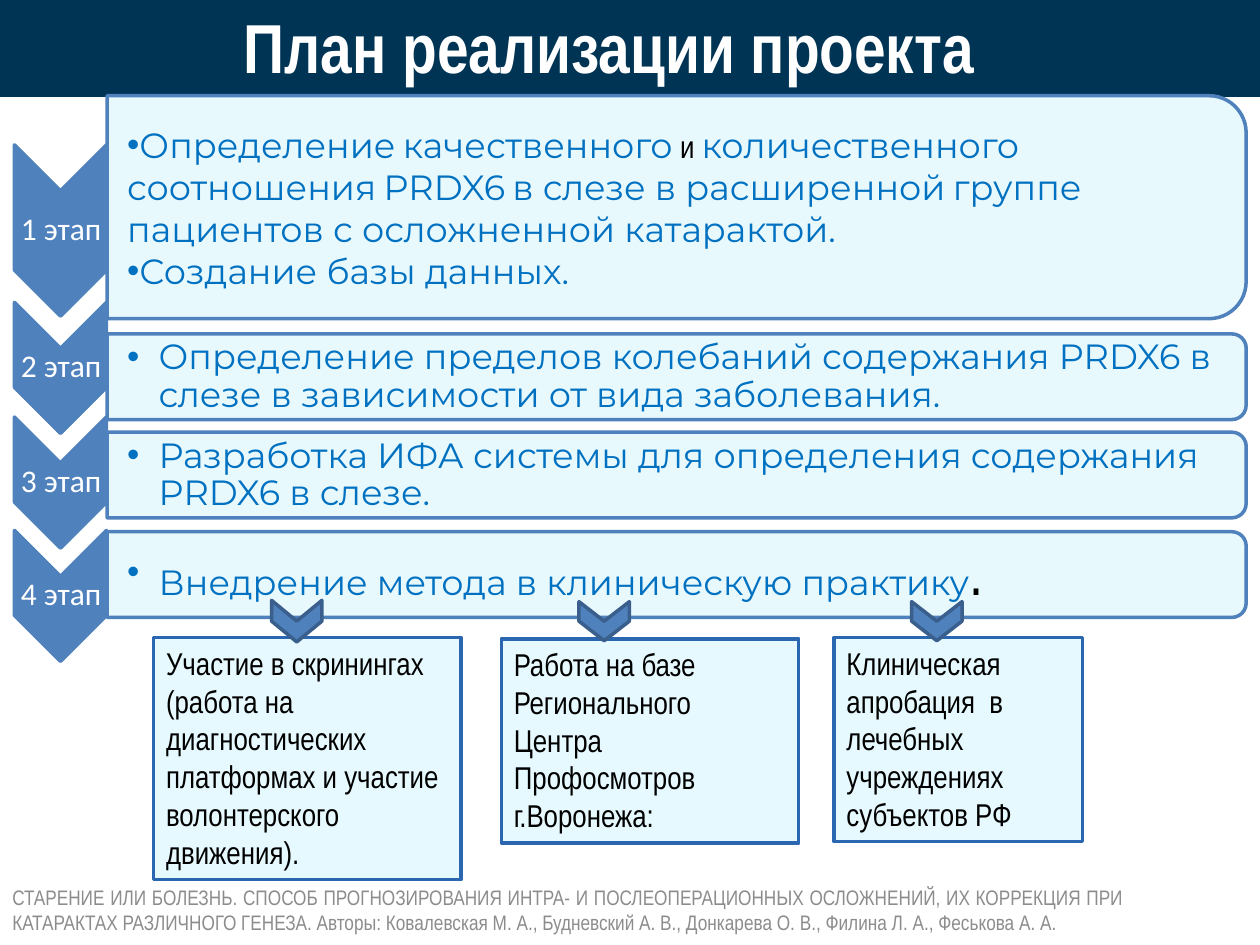
import pptx
import pptx.util
import pptx.dml.color
import pptx.enum.shapes
import pptx.enum.text
import lxml.etree

Inches, Pt = pptx.util.Inches, pptx.util.Pt
RGB = pptx.dml.color.RGBColor.from_string
SHAPE = pptx.enum.shapes.MSO_SHAPE
ALIGN = pptx.enum.text.PP_ALIGN
ANCHOR = pptx.enum.text.MSO_ANCHOR
C = {"navy": "003455", "blue": "4F81BD", "edge": "3A5F8C", "frame": "2A67B0",
     "pale": "E6F9FE", "text": "0070C0", "black": "000000", "white": "FFFFFF",
     "grey": "8C8C8C"}
NS = "{http://schemas.openxmlformats.org/drawingml/2006/main}"

prs = pptx.Presentation()
prs.slide_width, prs.slide_height = Inches(10), Inches(7.5)
s = prs.slides.add_slide(prs.slide_layouts[6])


def add_shape(kind, x, y, w, h, fill, line, rotation=0):
    sp = s.shapes.add_shape(kind, Inches(x), Inches(y), Inches(w), Inches(h))
    sp.rotation = rotation
    sp.shadow.inherit = False
    sp.fill.solid()
    sp.fill.fore_color.rgb = RGB(C[fill])
    sp.line.color.rgb = RGB(C[line])
    sp.line.width = Pt(2)
    return sp


def add_text(x, y, w, h, text, size, font, color, align=ALIGN.LEFT, anchor=ANCHOR.MIDDLE):
    tf = s.shapes.add_textbox(Inches(x), Inches(y), Inches(w), Inches(h)).text_frame
    tf.word_wrap = True
    tf.vertical_anchor = anchor
    tf.text = text
    for p in tf.paragraphs:
        p.alignment = align
        for r in p.runs:
            r.font.size, r.font.name = Pt(size), font
            r.font.color.rgb = RGB(C[color])
    return tf


add_shape(SHAPE.RECTANGLE, 0, 0, 10, 0.76, "navy", "navy")
tf = add_text(0.2, 0.05, 9.27, 0.63, "План реализации проекта", 39.6, "Arial Narrow",
              "white", ALIGN.CENTER)
tf.paragraphs[0].runs[0].font.bold = True

stages = [
    (1.15, 1.36, 0.76, 1.77, 0,
     [["Определение", " ", "качественного", " и ", "количественного", " ", "соотношения",
       " ", "PRDX6", " ", "в слезе в расширенной", " ",
       "группе пациентов с осложненной катарактой."], ["Создание базы данных."]]),
    (2.4, 1.04, 2.65, 0.68, 0.25,
     [["Определение пределов колебаний содержания PRDX6 в слезе "
       "в зависимости от вида заболевания."]]),
    (3.31, 1.04, 3.43, 0.68, 0.25,
     [["Разработка ИФА системы для определения содержания PRDX6 в слезе."]]),
    (4.21, 1.04, 4.22, 0.68, 0.25,
     [["Внедрение метода в клиническую практику", "."]]),
]
for i, (top, length, panel_top, panel_h, indent, paragraphs) in enumerate(stages, 1):
    add_shape(SHAPE.CHEVRON, 0.48 - length / 2, top + length / 2 - 0.365, length, 0.73,
              "blue", "blue", 90)
    tf = add_text(0.12, top + length / 2 - 0.16, 0.73, 0.31, f"{i} этап", 18, "Calibri",
                  "white", ALIGN.CENTER)
    tf.margin_left = tf.margin_right = tf.margin_top = tf.margin_bottom = Inches(0.01)
    tf.paragraphs[0].line_spacing = 0.9

    sp = add_shape(SHAPE.ROUND_2_SAME_RECTANGLE, 5.37 - panel_h / 2,
                   panel_top + panel_h / 2 - 4.52, panel_h, 9.04, "pale", "blue", 90)
    color = sp.fill._xPr.find(f"{NS}solidFill/{NS}srgbClr")
    lxml.etree.SubElement(color, NS + "alpha", val="90000")

    tf = add_text(0.85, panel_top + 0.04, 8.95 if i == 1 else 9, panel_h - 0.07, "", 20,
                  "Montserrat", "text")
    tf.margin_left = Inches(0.16)
    tf.margin_right = tf.margin_top = tf.margin_bottom = Inches(0.01)
    for n, runs in enumerate(paragraphs):
        p = tf.paragraphs[0] if n == 0 else tf.add_paragraph()
        p.line_spacing = 0.9 if indent else 1.0
        pPr = p._p.get_or_add_pPr()
        pPr.set("marL", str(Inches(indent)))
        pPr.set("indent", str(Inches(-0.25)))
        lxml.etree.SubElement(pPr, NS + "buFont", typeface="Arial")
        lxml.etree.SubElement(pPr, NS + "buChar", char="•")
        for text in runs:
            r = p.add_run()
            r.text = text
            plain = text in (" ", " и ", ".")
            r.font.name = "Arial Narrow" if plain else "Montserrat"
            r.font.size = Pt(35 if text == "." else 18 if plain else 20)
            r.font.color.rgb = RGB(C["black" if plain else "text"])

boxes = [
    (1.22, 5.06, 2.44, 1.92, "Участие в скринингах (работа на диагностических платформах "
     "и участие волонтерского движения)."),
    (3.98, 5.07, 2.36, 1.62, "Работа на базе Регионального Центра Профосмотров г.Воронежа:"),
    (6.62, 5.06, 1.97, 1.62, "Клиническая апробация  в лечебных учреждениях субъектов РФ"),
]
for x, y, w, h, text in boxes:
    add_shape(SHAPE.RECTANGLE, x, y, w, h, "pale", "frame")
    add_text(x, y, w, h, text, 18, "Arial Narrow", "black", anchor=ANCHOR.TOP)

for x, w in ((2.19, 0.33), (4.64, 0.31), (7.28, 0.31)):
    add_shape(SHAPE.CHEVRON, x, 4.73, w, 0.4, "blue", "edge", 90)

tf = add_text(0, 7.12, 9.02, 0.4,
              "СТАРЕНИЕ ИЛИ БОЛЕЗНЬ. СПОСОБ ПРОГНОЗИРОВАНИЯ ИНТРА- И ПОСЛЕОПЕРАЦИОННЫХ "
              "ОСЛОЖНЕНИЙ, ИХ КОРРЕКЦИЯ ПРИ КАТАРАКТАХ РАЗЛИЧНОГО ГЕНЕЗА. Авторы: "
              "Ковалевская М. А., Будневский А. В., Донкарева О. В., Филина Л. А., "
              "Феськова А. А.", 12, "Arial Narrow", "grey", ALIGN.JUSTIFY)
tf.margin_bottom = Inches(0.25)

prs.save("out.pptx")
